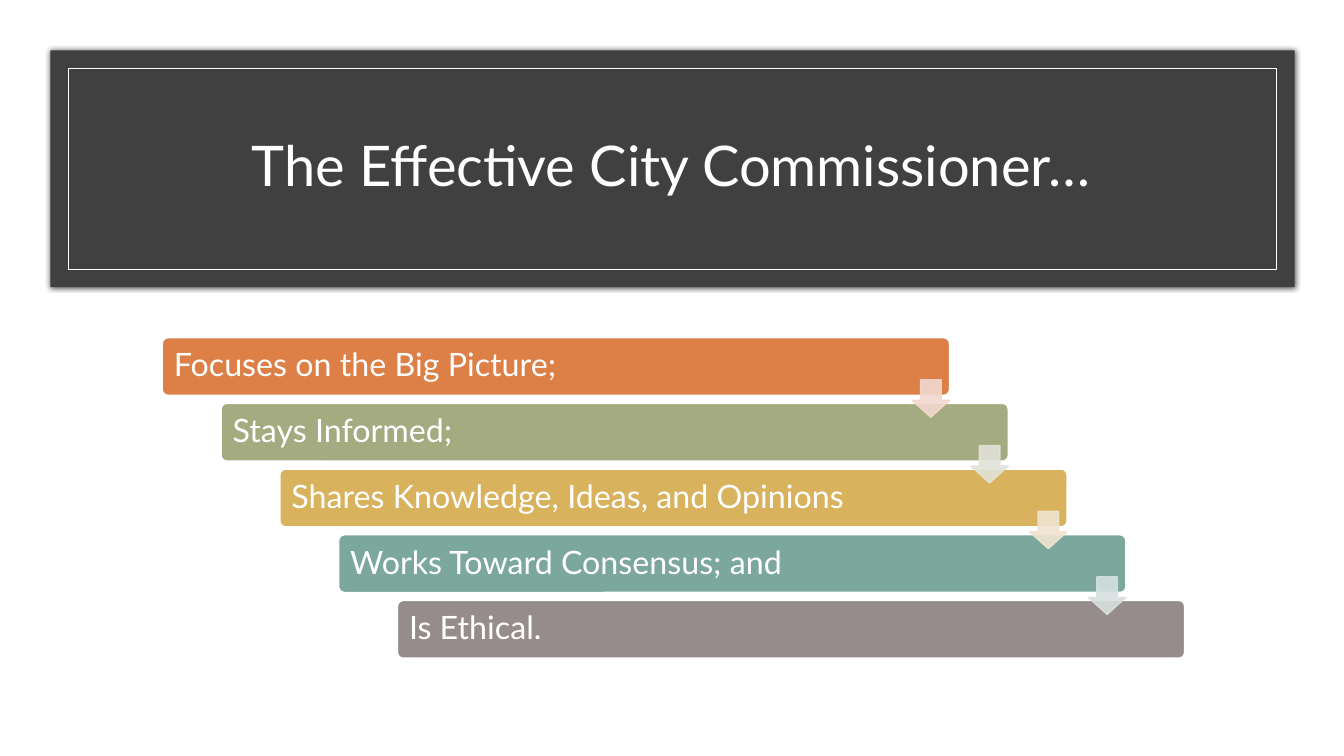
from dataclasses import dataclass

from lxml import etree
from pptx import Presentation
from pptx import util as u
from pptx.dml.color import RGBColor
from pptx.enum import shapes, text
from pptx.oxml import parse_xml
from pptx.oxml.ns import nsdecls, qn


@dataclass(frozen=True)
class Theme:
    """Colours, font and type sizes of the slide."""
    font: str = "Lato"
    title_size: int = 40
    step_size: int = 23
    white: str = "FFFFFF"
    banner: str = "404040"
    steps: tuple = ("DD8047", "A5AB81", "D8B25C", "7BA79D", "968C8C")
    arrows: tuple = ("F2D8CF", "E1E2D8", "F0E4D2", "D7E1DF")
    arrow_alpha: int = 90


THEME = Theme()
WIDTH, HEIGHT = 13.33, 7.5
BANNER_BOX = (0.5, 0.5, 12.34, 2.35)
STEPS_BOX = (1.61, 3.35, 10.14, 3.18)
TITLE = "The Effective City Commissioner…"
STEPS = (
    "Focuses on the Big Picture;",
    "Stays Informed;",
    "Shares Knowledge, Ideas, and Opinions",
    "Works Toward Consensus; and",
    "Is Ethical.",
)


def add_box(s, kind, box, fill=None, line=None, line_width=1):
    """Add a preset shape without shadow, filled and outlined as asked."""
    sp = s.shapes.add_shape(kind, *map(u.Inches, box))
    sp.shadow.inherit = False
    if fill:
        sp.fill.solid()
        sp.fill.fore_color.rgb = RGBColor.from_string(fill)
    else:
        sp.fill.background()
    if line:
        sp.line.color.rgb = RGBColor.from_string(line)
        sp.line.width = u.Pt(line_width)
    else:
        sp.line.fill.background()
    return sp


def set_text(sp, words, size, align):
    """Write one vertically centred white paragraph."""
    tf = sp.text_frame
    tf.text = words
    tf.word_wrap = True
    tf.vertical_anchor = text.MSO_ANCHOR.MIDDLE
    p = tf.paragraphs[0]
    p.alignment = align
    p.line_spacing = 0.9
    font = p.runs[0].font
    font.name = THEME.font
    font.size = u.Pt(size)
    font.color.rgb = RGBColor.from_string(THEME.white)


def set_alpha(sp, percent):
    """Make the fill and the line of a shape partly transparent."""
    for color in sp.element.spPr.iter(qn("a:srgbClr")):
        etree.SubElement(color, qn("a:alpha"), val=str(percent * 1000))


def add_glow_shadow(sp):
    """Give a shape a soft dark shadow on all sides."""
    sp.element.spPr.find(qn("a:effectLst")).append(parse_xml(
        f'<a:outerShdw {nsdecls("a")} blurRad="{u.Pt(4)}" dist="0" algn="ctr">'
        '<a:srgbClr val="000000"><a:alpha val="66000"/></a:srgbClr>'
        '</a:outerShdw>'))


def add_banner(s, box):
    """Draw the framed banner and put the title on it."""
    x, y, w, h = box
    rect = shapes.MSO_SHAPE.RECTANGLE
    add_glow_shadow(add_box(s, rect, box, THEME.banner))
    inset = 0.18
    frame = (x + inset, y + inset, w - 2 * inset, h - 2 * inset)
    add_box(s, rect, frame, line=THEME.white, line_width=0.5)
    title = s.shapes.title
    title.left, title.top = u.Inches(x + 0.66), u.Inches(y + 0.42)
    title.width, title.height = u.Inches(11), u.Inches(1.5)
    set_text(title, TITLE, THEME.title_size, text.PP_ALIGN.CENTER)
    title.element.getparent().append(title.element)


def add_staircase(s, box):
    """Draw the staggered bars, then the arrows that lead down them."""
    x, y, w, h = box
    bar_w, bar_h = 0.77 * w, 0.18 * h
    dx, dy = ((full - bar) / (len(STEPS) - 1)
              for full, bar in ((w, bar_w), (h, bar_h)))
    for i, (words, color) in enumerate(zip(STEPS, THEME.steps)):
        bar = add_box(s, shapes.MSO_SHAPE.ROUNDED_RECTANGLE,
                      (x + i * dx, y + i * dy, bar_w, bar_h),
                      color, THEME.white)
        bar.adjustments[0] = 0.1
        set_text(bar, words, THEME.step_size, text.PP_ALIGN.LEFT)
    size = 0.65 * bar_h
    for i, color in enumerate(THEME.arrows):
        arrow = add_box(s, shapes.MSO_SHAPE.DOWN_ARROW,
                        (x + i * dx + bar_w - size, y + i * dy + 0.73 * bar_h,
                         size, size), color, color)
        arrow.adjustments[0], arrow.adjustments[1] = 0.55, 0.45
        set_alpha(arrow, THEME.arrow_alpha)


def main():
    """Build and save the slide."""
    prs = Presentation()
    prs.slide_width, prs.slide_height = u.Inches(WIDTH), u.Inches(HEIGHT)
    s = prs.slides.add_slide(prs.slide_layouts.get_by_name("Title Only"))
    s.background.fill.solid()
    s.background.fill.fore_color.rgb = RGBColor.from_string(THEME.white)
    add_banner(s, BANNER_BOX)
    add_staircase(s, STEPS_BOX)
    prs.save("out.pptx")


if __name__ == "__main__":
    main()
